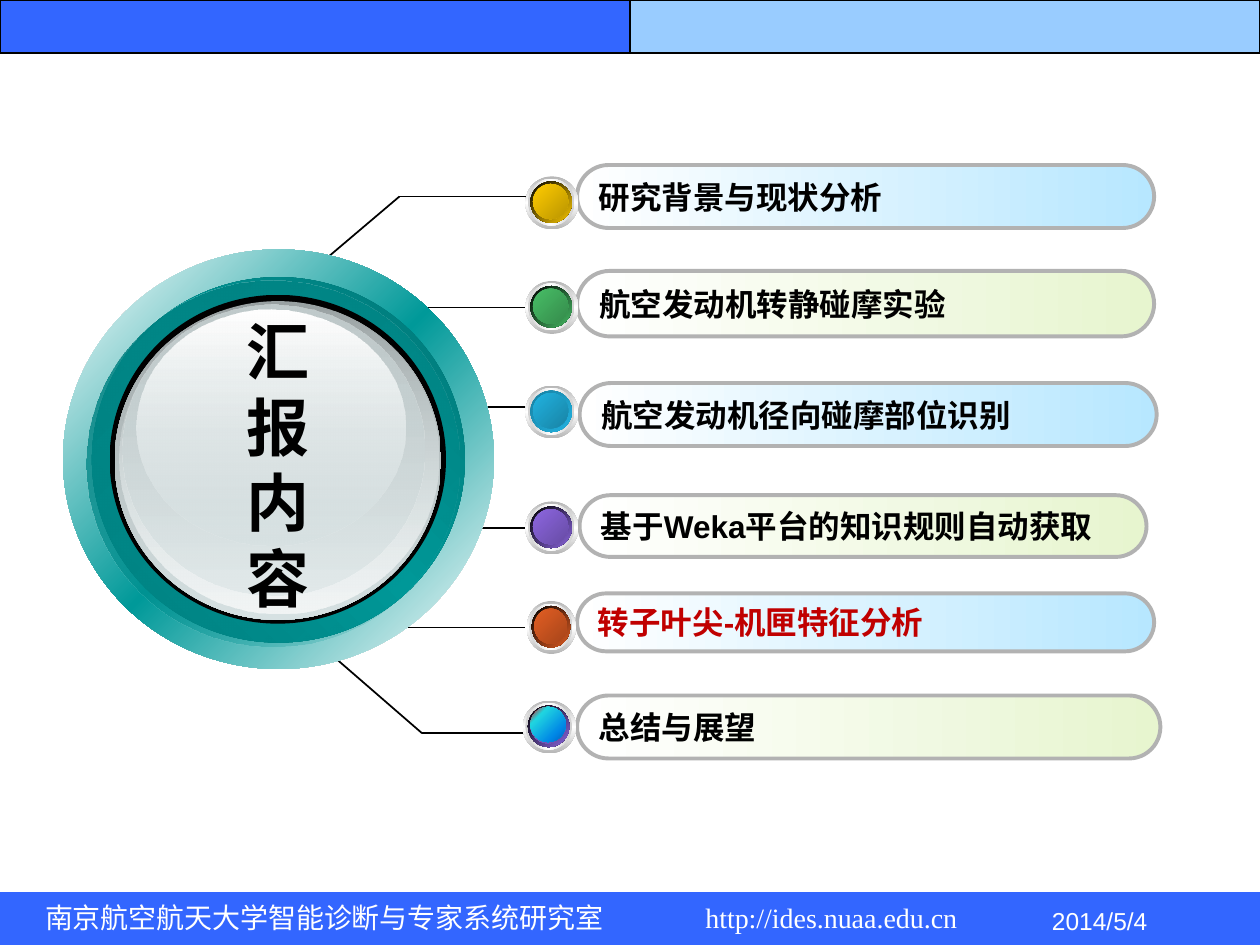
from lxml import etree
from pptx import Presentation
from pptx.dml.color import RGBColor
from pptx.enum.shapes import MSO_CONNECTOR, MSO_SHAPE
from pptx.enum.text import MSO_ANCHOR, MSO_AUTO_SIZE, PP_ALIGN
from pptx.oxml.ns import qn
from pptx.util import Inches, Pt

OVAL, PILL, RECT = MSO_SHAPE.OVAL, MSO_SHAPE.ROUNDED_RECTANGLE, MSO_SHAPE.RECTANGLE
STRAIGHT = MSO_CONNECTOR.STRAIGHT
TOP, MIDDLE = MSO_ANCHOR.TOP, MSO_ANCHOR.MIDDLE
LEFT, CENTER = PP_ALIGN.LEFT, PP_ALIGN.CENTER
NO_FIT = MSO_AUTO_SIZE.NONE

THEME = {
    "bar": "3366FF", "bar_light": "99CCFF", "ink": "000000", "light": "FFFFFF",
    "highlight": "C00000", "pill_edge": "B2B2B2",
    "pill_blue": "B7E7FF", "pill_green": "E7F5CF",
    "heading": {"name": "Calibri", "size": Pt(36), "bold": True},
    "topic": {"name": "Arial", "size": Pt(18), "bold": True},
    "institute": {"name": "Arial", "size": Pt(16), "bold": False},
    "website": {"name": "Times New Roman", "size": Pt(16), "bold": False},
    "date": {"name": "Arial", "size": Pt(14), "bold": False},
}


def gradient_shape(kind, box, stops, angle):
    """Add a borderless shape; stops are (position %, colour[, opacity %]), angle clockwise."""
    shape = slide.shapes.add_shape(kind, *map(Inches, box))
    shape.shadow.inherit = False
    shape.line.fill.background()
    shape.fill.gradient()
    shape.fill.gradient_angle = (360 - angle) % 360
    stop_list = shape._element.spPr.find(qn("a:gradFill")).find(qn("a:gsLst"))
    stop_list.clear()
    for position, color, *opacity in stops:
        stop = etree.SubElement(stop_list, qn("a:gs"), pos=str(position * 1000))
        srgb = etree.SubElement(stop, qn("a:srgbClr"), val=color)
        for percent in opacity:
            etree.SubElement(srgb, qn("a:alpha"), val=str(percent * 1000))
    return shape


def write(frame, lines, font, color, align=LEFT, anchor=TOP):
    layout = {"word_wrap": True, "auto_size": NO_FIT, "vertical_anchor": anchor}
    for attribute, value in layout.items():
        setattr(frame, attribute, value)
    frame.text = "\n".join(lines)
    for paragraph in frame.paragraphs:
        paragraph.alignment = align
        run_font = paragraph.runs[0].font
        for attribute, value in THEME[font].items():
            setattr(run_font, attribute, value)
        run_font.color.rgb = RGBColor.from_string(THEME[color])


prs = Presentation()
prs.slide_width, prs.slide_height = Inches(10), Inches(7.5)
slide = prs.slides.add_slide(prs.slide_layouts[5])

# Header and footer bars
for left, top, width, color, outlined in [
    (0, 0, 5, "bar", True), (5, 0, 5, "bar_light", True), (0, 7.08, 10, "bar", False),
]:
    bar = slide.shapes.add_shape(RECT, *map(Inches, (left, top, width, 0.42)))
    bar.shadow.inherit = False
    bar.fill.solid()
    bar.fill.fore_color.rgb = RGBColor.from_string(THEME[color])
    if outlined:
        bar.line.color.rgb = RGBColor.from_string(THEME["ink"])
        bar.line.width = Pt(0.75)
    else:
        bar.line.fill.background()

# Leader lines from the dial to each topic
for start_x, start_y, end_x, end_y in [
    (2.58, 2.06, 3.17, 1.56), (3.17, 1.56, 4.27, 1.56),
    (3.05, 2.44, 4.31, 2.44), (3.57, 3.23, 4.17, 3.23),
    (3.58, 4.19, 4.25, 4.19), (2.91, 4.98, 4.17, 4.98),
    (2.67, 5.23, 3.35, 5.82), (3.35, 5.82, 4.25, 5.82),
]:
    leader = slide.shapes.add_connector(
        STRAIGHT, *map(Inches, (start_x, start_y, end_x, end_y)))
    leader.line.color.rgb = RGBColor.from_string(THEME["ink"])
    leader.line.width = Pt(1)
    etree.SubElement(leader._element.spPr, qn("a:effectLst"))

# Dial, from the outer ring to the glass highlight
for box, stops, angle in [
    ((0.5, 1.98, 3.42, 3.33), [(0, "FFFFFF"), (50, "009999"), (100, "FFFFFF")], 45),
    ((0.73, 2.2, 2.96, 2.9), [(0, "007575"), (50, "009999"), (100, "007575")], 315),
    ((0.69, 2.23, 2.96, 2.9), [(0, "007E7E"), (100, "009999", 0)], 45),
    ((0.87, 2.34, 2.67, 2.61), [(0, "000000"), (100, "000000")], 0),
    ((0.91, 2.39, 2.59, 2.53), [(0, "99A1A2"), (100, "D6E1E2")], 90),
    ((0.95, 2.4, 2.53, 2.47), [(0, "D6E1E2", 0), (100, "F2F5F5")], 90),
    ((0.97, 2.42, 2.4, 2.31), [(0, "C1CBCC"), (100, "D6E1E2", 48)], 90),
    ((1.08, 2.46, 2.14, 1.87), [(0, "FFFFFF"), (100, "D6E1E2", 38)], 90),
]:
    gradient_shape(OVAL, box, stops, angle)

# The heading stands on the dial, one character to a line
heading = slide.shapes.title
slide.shapes._spTree.append(heading._element)
heading.left, heading.top, heading.width, heading.height = map(
    Inches, (0.89, 2.43, 2.63, 2.5))
write(heading.text_frame, "汇报内容", "heading", "ink", CENTER)

# Topics: text, text colour, pill box, bead box, bead rim, bead light and dark
topics = [
    ("研究背景与现状分析", "ink", (4.58, 1.31, 4.58, 0.5),
     (4.17, 1.4, 0.42), "000000", "FFCC00", "BA9500"),
    ("航空发动机转静碰摩实验", "ink", (4.58, 2.15, 4.58, 0.52),
     (4.17, 2.23, 0.42), "000000", "48BE67", "358B4B"),
    ("航空发动机径向碰摩部位识别", "ink", (4.6, 3.04, 4.58, 0.5),
     (4.17, 3.06, 0.42), "1880A1", "21B3E1", "1883A4"),
    ("基于Weka平台的知识规则自动获取", "ink", (4.6, 3.93, 4.5, 0.49),
     (4.17, 3.98, 0.42), "000000", "8D67E1", "674BA4"),
    ("转子叶尖-机匣特征分析", "highlight", (4.58, 4.71, 4.58, 0.46),
     (4.18, 4.77, 0.39), "000000", "E35E23", "A6451A"),
    ("总结与展望", "ink", (4.58, 5.52, 4.63, 0.5),
     (4.15, 5.56, 0.42), "000000", "8D67E1", "674BA4"),
]
for index, (topic, color, pill_box, bead, rim, glow, shade) in enumerate(topics):
    tint = THEME["pill_green" if index % 2 else "pill_blue"]
    pill = gradient_shape(PILL, pill_box, [(0, THEME["light"]), (100, tint)], 0)
    pill.adjustments[0] = 0.5
    pill.line.color.rgb = RGBColor.from_string(THEME["pill_edge"])
    pill.line.width = Pt(2.25)
    write(pill.text_frame, [topic], "topic", color, anchor=MIDDLE)

    left, top, width = bead
    for inset, size, stops, angle in [
        (0, 0.42, [(0, "B6B6B6"), (50, "FFFFFF"), (100, "B6B6B6")], 90),
        (0.02, 0.37, [(0, "D1D1D1"), (50, "FFFFFF"), (100, "D1D1D1")], 0),
        (0.04, 0.33, [(0, rim), (100, glow)], 45),
        (0.06, 0.28, [(0, glow), (100, shade)], 45),
    ]:
        layer_box = (left + inset, top + inset, size * width / 0.42, size)
        gradient_shape(OVAL, layer_box, stops, angle)

# Bright core on the last bead
gradient_shape(OVAL, (4.21, 5.61, 0.28, 0.28), [
    (0, "FF0000"), (25, "21D6E0"), (75, "0087E6"), (100, "005CBF")], 45)

# Footer
for text, font, left, top, width in [
    ("南京航空航天大学智能诊断与专家系统研究室", "institute", 0.26, 7.1, 5),
    ("http://ides.nuaa.edu.cn", "website", 5.5, 7.1, 2.6),
    ("2014/5/4", "date", 8.25, 7.14, 1.75),
]:
    footer = slide.shapes.add_textbox(*map(Inches, (left, top, width, 0.36)))
    write(footer.text_frame, [text], font, "light")

prs.save("out.pptx")
